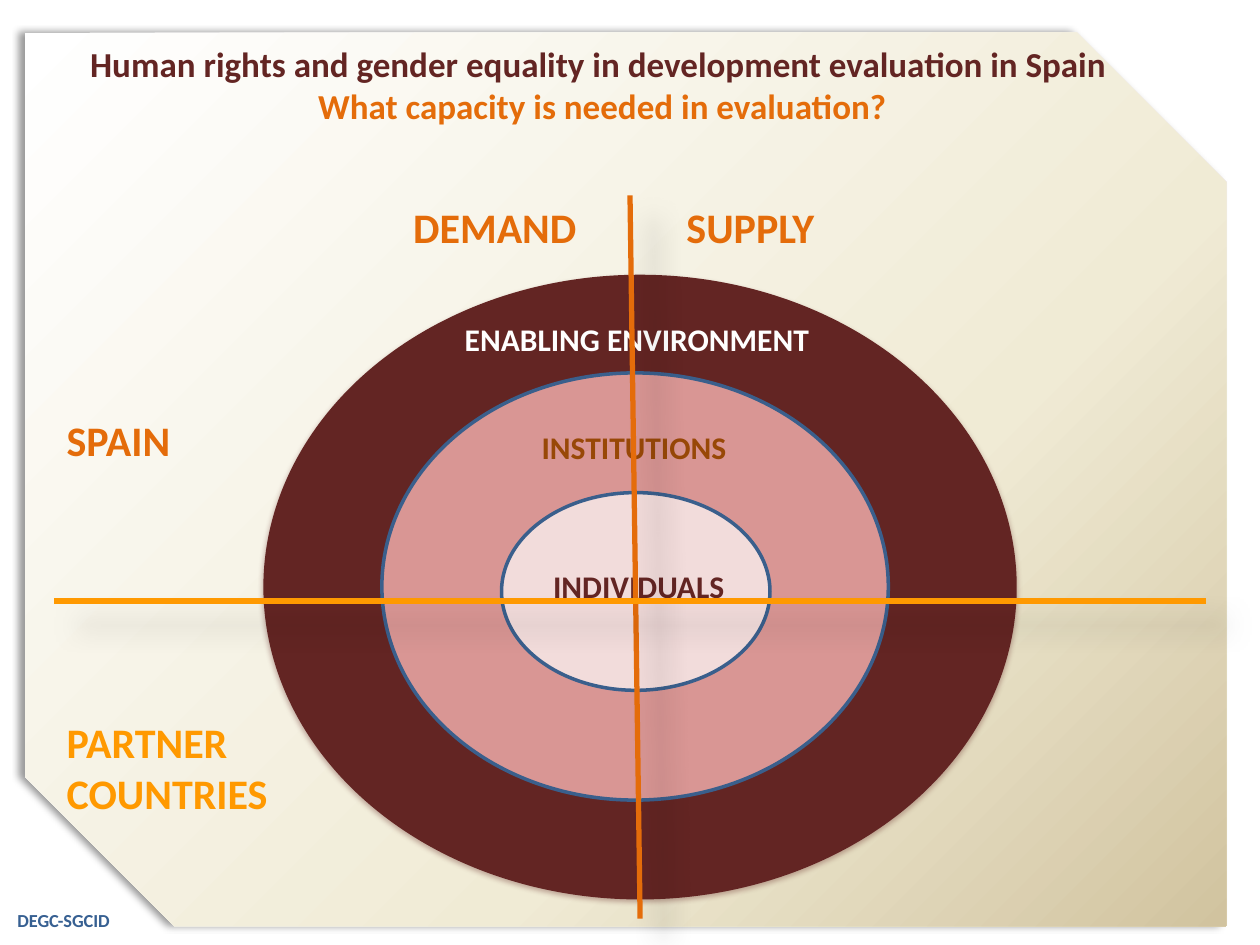
from typing import NamedTuple, Optional

from lxml import etree
from pptx import Presentation
from pptx.dml.color import RGBColor
from pptx.enum.shapes import MSO_CONNECTOR as Link, MSO_SHAPE as Kind
from pptx.enum.text import MSO_AUTO_SIZE as Fit, PP_ALIGN as Align
from pptx.oxml import parse_xml
from pptx.oxml.ns import qn
from pptx.util import Pt

NS = "http://schemas.openxmlformats.org/drawingml/2006/main"

# Colours
WHITE = RGBColor(0xFF, 0xFF, 0xFF)
BLACK = RGBColor(0x00, 0x00, 0x00)
MAROON = RGBColor(0x63, 0x25, 0x23)
ROSE = RGBColor(0xD9, 0x96, 0x94)
BLUSH = RGBColor(0xF2, 0xDC, 0xDB)
BLUE = RGBColor(0x3A, 0x5F, 0x8C)
NAVY = RGBColor(0x37, 0x60, 0x92)
BROWN = RGBColor(0x98, 0x48, 0x07)
ORANGE = RGBColor(0xE4, 0x6C, 0x0A)
AMBER = RGBColor(0xFF, 0x99, 0x00)
CREAM = RGBColor(0xF0, 0xEB, 0xD5)
SAND = RGBColor(0xD1, 0xC3, 0x9F)


class Shade(NamedTuple):
    color: RGBColor
    alpha: int
    blur: float
    dist: float
    angle: int


class Ring(NamedTuple):
    box: tuple[float, float, float, float]
    fill: RGBColor
    edge: Optional[RGBColor] = None
    shade: Optional[Shade] = None


class Label(NamedTuple):
    box: tuple[float, float, float, float]
    lines: tuple[str, ...]
    size: float
    color: RGBColor


class Axis(NamedTuple):
    start: tuple[float, float]
    end: tuple[float, float]
    color: RGBColor


PANEL = (14.4, 18.7, 686.2, 510.5)
STOPS = ((0, WHITE), (65, CREAM), (100, SAND))
EDGE = Shade(BLACK, 40, 4, 3, 180)
GLOW = Shade(MAROON, 35, 3.1, 1.8, 90)
DROP = Shade(BLACK, 26, 15, 18, 45)

RINGS = (
    Ring((150.5, 157, 430.5, 357), MAROON, shade=GLOW),
    Ring((218.2, 213.1, 289.4, 244.1), ROSE, BLUE),
    Ring((286.6, 281.5, 153.4, 113), BLUSH, BLUE),
)
LEVELS = (
    Label((258.5, 179.3, 213, 28.8), ("ENABLING ENVIRONMENT",), 18, WHITE),
    Label((302.4, 241.2, 121, 28.8), ("INSTITUTIONS",), 18, BROWN),
    Label((309, 320.4, 113, 28.8), ("INDIVIDUALS",), 18, MAROON),
)
SIDES = (
    Label((229, 111.6, 108.7, 36.7), ("DEMAND",), 24, ORANGE),
    Label((385.2, 111.6, 88.6, 36.7), ("SUPPLY",), 24, ORANGE),
    Label((31, 406, 130.3, 65.5), ("PARTNER", "COUNTRIES"), 24, AMBER),
    Label((31, 233.3, 74.2, 36), ("SPAIN",), 24, ORANGE),
)
FOOT = Label((2.9, 516.2, 79.2, 20.2), ("DEGC-SGCID",), 10.5, NAVY)
UPRIGHT = Axis((360, 111.6), (365.8, 524.9), ORANGE)
LEVEL = Axis((31, 343.4), (689, 343.4), AMBER)


def points(vals: tuple) -> list:
    return [Pt(v) for v in vals]


def style(font, size: float, color: RGBColor) -> None:
    form = {"name": "Calibri", "size": Pt(size), "bold": True}
    for key, val in form.items():
        setattr(font, key, val)
    font.color.rgb = color


def cast(props, shade: Optional[Shade]) -> None:
    """Give the shape properties an effect list, with a shadow if one is set."""
    for old in props.findall(qn("a:effectLst")):
        props.remove(old)
    fx = etree.SubElement(props, qn("a:effectLst"))
    if shade:
        fx.append(parse_xml(
            f'<a:outerShdw xmlns:a="{NS}" blurRad="{Pt(shade.blur)}" '
            f'dist="{Pt(shade.dist)}" dir="{shade.angle * 60000}" '
            f'algn="ctr" rotWithShape="0"><a:srgbClr val="{shade.color}">'
            f'<a:alpha val="{shade.alpha * 1000}"/></a:srgbClr></a:outerShdw>'))


def draw_panel(shapes) -> None:
    panel = shapes.add_shape(Kind.SNIP_2_DIAG_RECTANGLE, *points(PANEL))
    panel.adjustments[0], panel.adjustments[1] = 0, 0.167
    panel.line.fill.background()
    stops = "".join(f'<a:gs pos="{pos * 1000}"><a:srgbClr val="{color}"/></a:gs>'
                    for pos, color in STOPS)
    props = panel._element.spPr
    props.find(qn("a:prstGeom")).addnext(parse_xml(
        f'<a:gradFill xmlns:a="{NS}"><a:gsLst>{stops}</a:gsLst>'
        f'<a:lin ang="{45 * 60000}" scaled="0"/></a:gradFill>'))
    cast(props, EDGE)


def draw_ring(shapes, ring: Ring) -> None:
    oval = shapes.add_shape(Kind.OVAL, *points(ring.box))
    oval.fill.solid()
    oval.fill.fore_color.rgb = ring.fill
    if ring.edge:
        oval.line.color.rgb = ring.edge
        oval.line.width = Pt(2)
    else:
        oval.line.fill.background()
    cast(oval._element.spPr, ring.shade)


def draw_label(shapes, label: Label) -> None:
    frame = shapes.add_textbox(*points(label.box)).text_frame
    frame.word_wrap = False
    frame.auto_size = Fit.SHAPE_TO_FIT_TEXT
    frame.text = "\n".join(label.lines)
    for para in frame.paragraphs:
        style(para.runs[0].font, label.size, label.color)


def draw_axis(shapes, axis: Axis) -> None:
    line = shapes.add_connector(Link.STRAIGHT, *points(axis.start + axis.end))
    line.line.color.rgb = axis.color
    line.line.width = Pt(3)
    cast(line._element.spPr, DROP)


def draw_title(shapes) -> None:
    frame = shapes.add_textbox(*points((20.2, 20.9, 648, 67))).text_frame
    frame.word_wrap = True
    para = frame.paragraphs[0]
    para.alignment = Align.CENTER
    head = para.add_run()
    head.text = "Human rights and gender equality in development evaluation in Spain "
    style(head.font, 20, MAROON)
    para.add_line_break()
    ask = para.add_run()
    ask.text = "What capacity is needed in evaluation?"
    style(ask.font, 20, ORANGE)


def main() -> None:
    deck = Presentation()
    deck.slide_width, deck.slide_height = Pt(720), Pt(540)
    shapes = deck.slides.add_slide(deck.slide_layouts[6]).shapes

    # Backdrop
    draw_label(shapes, FOOT)
    draw_panel(shapes)

    # Nested levels of capacity
    for ring in RINGS:
        draw_ring(shapes, ring)
    for label in LEVELS:
        draw_label(shapes, label)

    # Axes and their sides
    draw_axis(shapes, UPRIGHT)
    draw_axis(shapes, LEVEL)
    for label in SIDES:
        draw_label(shapes, label)

    draw_title(shapes)
    deck.save("out.pptx")


if __name__ == "__main__":
    main()
